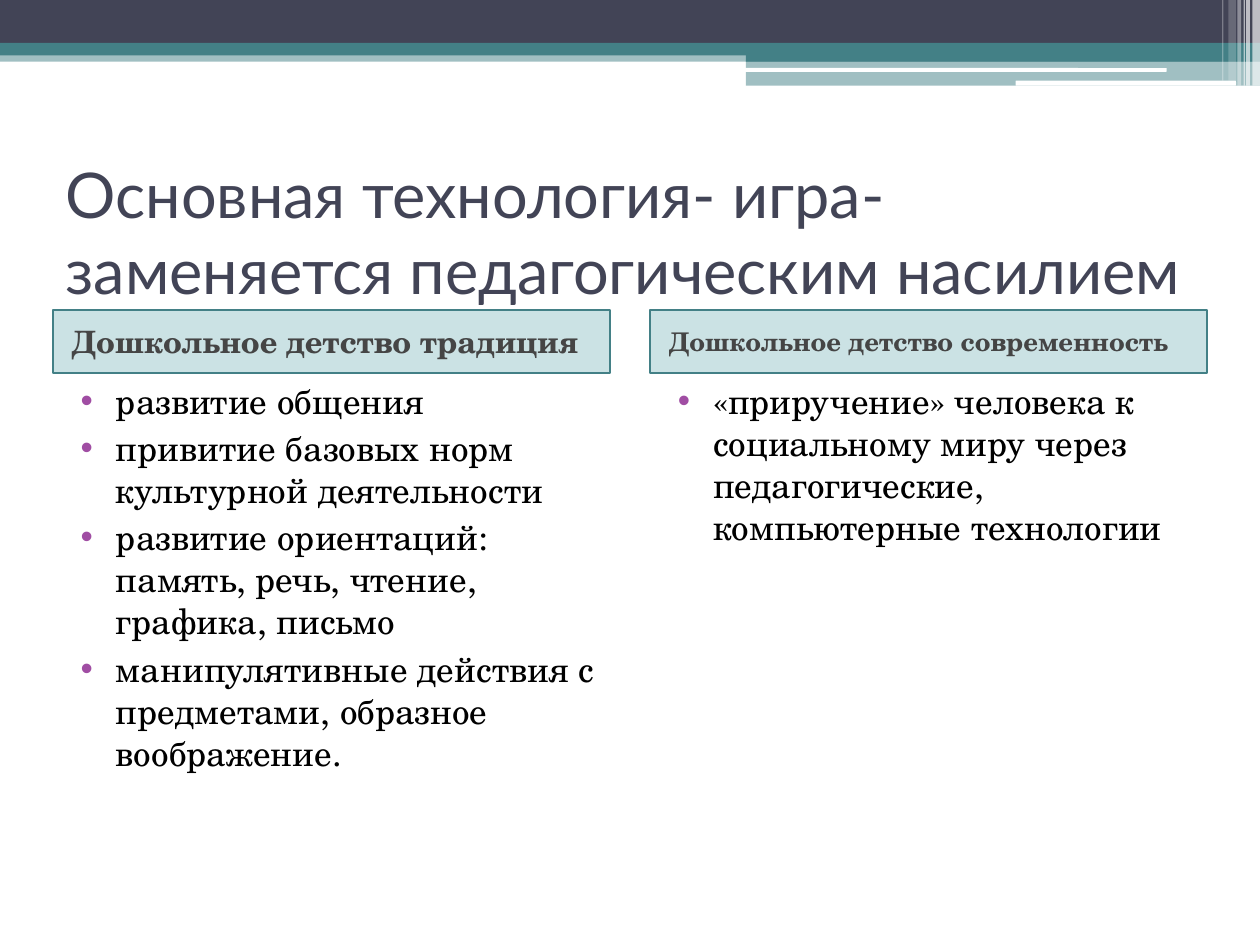
from dataclasses import dataclass

from lxml import etree
from pptx import Presentation
from pptx.dml.color import RGBColor
from pptx.enum import shapes, text
from pptx.oxml.ns import qn
from pptx.util import Inches, Pt

NAVY = RGBColor(0x42, 0x44, 0x56)
TEAL = RGBColor(0x43, 0x80, 0x86)
AQUA = RGBColor(0x32, 0x8E, 0x97)
WHITE = RGBColor(0xFF, 0xFF, 0xFF)
GREY = RGBColor(0x45, 0x45, 0x45)
BLACK = RGBColor(0, 0, 0)
PURPLE = RGBColor(0xA0, 0x4D, 0xA3)
SANS, SERIF = "Lato", "TeX Gyre Schola"
COL_WIDTH = 4.42


@dataclass
class Bar:
    left: float
    top: float
    width: float
    height: float
    color: RGBColor
    alpha: int = 100
    rounded: bool = False


@dataclass
class Column:
    left: float
    head_id: int
    list_id: int
    head: str
    head_size: float
    items: list[str]


BARS = [
    Bar(0, 0.4, 10, 0.09, TEAL, 50),
    Bar(0, 0, 10, 0.34, NAVY),
    Bar(0, 0.34, 10, 0.1, TEAL),
    Bar(5.92, 0.39, 4.08, 0.1, TEAL),
    Bar(5.92, 0.48, 4.08, 0.2, TEAL, 50),
    Bar(5.91, 0.54, 3.35, 0.03, WHITE, rounded=True),
    Bar(8.06, 0.64, 1.75, 0.04, WHITE, rounded=True),
    Bar(9.94, 0, 0.06, 0.68, WHITE, 65),
    Bar(9.89, 0, 0.03, 0.68, WHITE, 65),
    Bar(9.87, 0, 0.01, 0.68, WHITE, 60),
    Bar(9.82, 0, 0.03, 0.68, WHITE, 40),
    Bar(9.75, 0, 0.06, 0.64, WHITE, 20),
    Bar(9.7, 0, 0.01, 0.64, WHITE, 30),
]

COLUMNS = [
    Column(0.42, 1, 2, "Дошкольное детство традиция", 17.6, [
        "развитие общения",
        "привитие базовых норм культурной деятельности",
        "развитие ориентаций: память, речь, чтение, графика, письмо",
        "манипулятивные действия с предметами, образное воображение.",
    ]),
    Column(5.16, 3, 4, "Дошкольное детство современность", 14.7, [
        "«приручение» человека к социальному миру через педагогические, "
        "компьютерные технологии",
    ]),
]


def paint(shape, color: RGBColor, alpha: int = 100) -> None:
    """Fill a shape, with alpha as percent opacity."""
    shape.fill.solid()
    shape.fill.fore_color.rgb = color
    if alpha < 100:
        clr = shape.fill._xPr.find(qn("a:solidFill"))[0]
        etree.SubElement(clr, qn("a:alpha"), val=str(alpha * 1000))


def draw_bar(slide, bar: Bar):
    kind = shapes.MSO_SHAPE.ROUNDED_RECTANGLE if bar.rounded else shapes.MSO_SHAPE.RECTANGLE
    shape = slide.shapes.add_shape(kind, Inches(bar.left), Inches(bar.top),
                                   Inches(bar.width), Inches(bar.height))
    paint(shape, bar.color, bar.alpha)
    shape.line.fill.background()
    shape.shadow.inherit = False
    return shape


def write(shape, box: tuple, content: str, font: str, size: float, color: RGBColor,
          bold: bool = False, anchor=text.MSO_ANCHOR.MIDDLE) -> None:
    """Place a placeholder and fill it with formatted, left-aligned text."""
    shape.left, shape.top, shape.width, shape.height = map(Inches, box)
    frame = shape.text_frame
    frame.text = content
    frame.word_wrap = True
    frame.auto_size = text.MSO_AUTO_SIZE.NONE
    frame.vertical_anchor = anchor
    for para in frame.paragraphs:
        para.alignment = text.PP_ALIGN.LEFT
        for run in para.runs:
            run.font.name = font
            run.font.size = Pt(size)
            run.font.bold = bold
            run.font.color.rgb = color


def indent(para, left: float, first: float) -> None:
    para.space_before = Pt(3)
    props = para._p.get_or_add_pPr()
    props.set("marL", str(Inches(left)))
    props.set("indent", str(Inches(first)))


def add_bullet(para) -> None:
    props = para._p.get_or_add_pPr()
    tint = etree.SubElement(props, qn("a:buClr"))
    etree.SubElement(tint, qn("a:srgbClr"), val=str(PURPLE))
    etree.SubElement(props, qn("a:buFont"), typeface="Arial")
    etree.SubElement(props, qn("a:buChar"), char="•")


def fill_column(slide, col: Column) -> None:
    holders = {item.placeholder_format.idx: item for item in slide.placeholders}
    head, body = holders[col.head_id], holders[col.list_id]
    write(head, (col.left, 2.46, COL_WIDTH, 0.5), col.head, SERIF, col.head_size, GREY, True)
    paint(head, AQUA, 25)
    head.line.color.rgb = TEAL
    head.line.width = Pt(1)
    indent(head.text_frame.paragraphs[0], 0.05, 0)

    write(body, (col.left, 2.96, COL_WIDTH, 4.25), "\n".join(col.items),
          SERIF, 20, BLACK, anchor=text.MSO_ANCHOR.TOP)
    for para in body.text_frame.paragraphs:
        indent(para, 0.4, -0.28)
        add_bullet(para)


def main() -> None:
    deck = Presentation()
    deck.slide_width, deck.slide_height = Inches(10), Inches(7.5)
    slide = deck.slides.add_slide(deck.slide_layouts.get_by_name("Comparison"))
    title = slide.shapes.title
    for bar in BARS:
        title._element.addprevious(draw_bar(slide, bar)._element)
    write(title, (0.42, 1.25, 9.17, 1.17),
          "Основная технология- игра- заменяется педагогическим насилием", SANS, 36, NAVY)
    for col in COLUMNS:
        fill_column(slide, col)
    deck.save("out.pptx")


if __name__ == "__main__":
    main()
